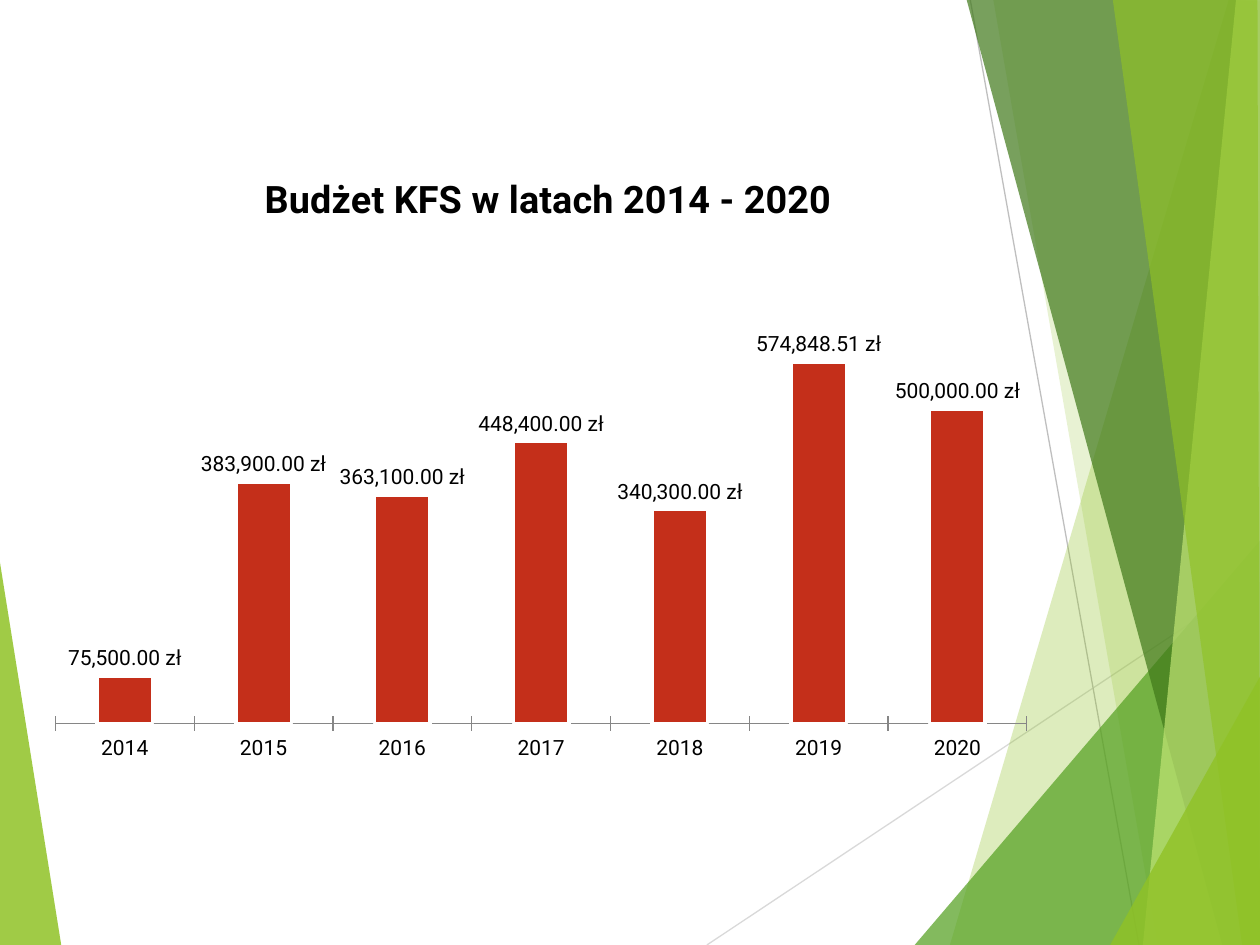
import pptx
import pptx.chart.data
import pptx.dml.color
import pptx.enum.chart
import pptx.enum.shapes
import pptx.oxml
import pptx.oxml.ns
import pptx.util
from pptx.util import Cm

FONT = "Roboto"
COLORS = {
    "lime": "90C226", "green": "54A021", "forest": "3F7819", "pale": "C0E474",
    "bar": "C42F1A", "white": "FFFFFF", "text": "000000", "axis": "868686",
    "light_line": "D9D9D9", "grey_line": "BFBFBF",
}
CURRENCY = '#,##0.00\\ "zł"'
BUDGET = {
    "2014": 75500, "2015": 383900, "2016": 363100, "2017": 448400,
    "2018": 340300, "2019": 574848.51, "2020": 500000,
}

# Outlines in cm: the slide edges, with a slight overhang
TOP, BOTTOM, RIGHT = -0.03, 19.05, 25.43
LEFT_WEDGE = ("lime", 85, [(-0.03, 11.15), (1.24, 19.08), (-0.03, BOTTOM)])
LINES = [
    ("light_line", (14.25, BOTTOM), (RIGHT, 11.61)),
    ("grey_line", (19.56, 0), (22.96, BOTTOM)),
]
RIGHT_FACETS = [
    ("lime", 30, [(24.77, 0), (19.15, BOTTOM), (25.45, 19.08), (RIGHT, 0.03)]),
    ("lime", 20, [(20.02, TOP), (23.34, BOTTOM), (RIGHT, BOTTOM), (RIGHT, TOP)]),
    ("green", 72, [(18.44, BOTTOM), (25.4, 10.9), (RIGHT, BOTTOM)]),
    ("forest", 70, [(19.48, TOP), (24.64, BOTTOM), (RIGHT, BOTTOM), (RIGHT, TOP)]),
    ("pale", 70, [(24.92, TOP), (23.04, BOTTOM), (RIGHT, BOTTOM), (25.4, TOP)]),
    ("lime", 65, [(22.43, TOP), (25.04, BOTTOM), (25.4, BOTTOM), (25.35, TOP)]),
    ("lime", 80, [(22.38, BOTTOM), (RIGHT, 13.59), (RIGHT, BOTTOM)]),
]


def rgb(name):
    return pptx.dml.color.RGBColor.from_string(COLORS[name])


def add_facet(page, color, opacity, points):
    corners = [(Cm(x), Cm(y)) for x, y in points]
    builder = page.shapes.build_freeform(*corners[0])
    builder.add_line_segments(corners[1:], close=True)
    shape = builder.convert_to_shape()
    shape.shadow.inherit = False
    shape.line.fill.background()
    shape.fill.solid()
    shape.fill.fore_color.rgb = rgb(color)
    tint = shape.fill._xPr.find(".//" + pptx.oxml.ns.qn("a:srgbClr"))
    alpha = pptx.oxml.parse_xml(
        f'<a:alpha {pptx.oxml.ns.nsdecls("a")} val="{opacity * 1000}"/>')
    tint.append(alpha)


def add_line(page, color, start, end):
    line = page.shapes.add_connector(
        pptx.enum.shapes.MSO_CONNECTOR.STRAIGHT,
        *[Cm(value) for value in start + end])
    line.line.color.rgb = rgb(color)
    line.line.width = pptx.util.Pt(0.75)
    line._element.spPr.append(
        pptx.oxml.parse_xml(f'<a:effectLst {pptx.oxml.ns.nsdecls("a")}/>'))


def style_font(font, size, bold=False):
    font.name = FONT
    font.size = pptx.util.Pt(size)
    font.bold = bold
    font.color.rgb = rgb("text")


def set_layout(parent, after, x, y, width=None, height=None):
    """Place a chart part by fractions of the chart's size."""
    target = '<c:layoutTarget val="inner"/>' if width else ""
    sizes = f'<c:w val="{width}"/><c:h val="{height}"/>' if width else ""
    layout = pptx.oxml.parse_xml(
        f'<c:layout {pptx.oxml.ns.nsdecls("c")}><c:manualLayout>{target}'
        f'<c:xMode val="edge"/><c:yMode val="edge"/>'
        f'<c:x val="{x}"/><c:y val="{y}"/>{sizes}'
        f'</c:manualLayout></c:layout>')
    for old in parent.findall(pptx.oxml.ns.qn("c:layout")):
        parent.remove(old)
    if after is None:
        parent.insert(0, layout)
    else:
        after.addnext(layout)


def add_title(chart, text):
    chart.has_title = True
    title = chart.chart_title
    span = title.text_frame.paragraphs[0].add_run()
    span.text = text
    style_font(span.font, 21.6, bold=True)
    title.include_in_layout = False
    element = title._element
    set_layout(element, element.find(pptx.oxml.ns.qn("c:tx")), 0.22, 0.05)


def add_budget_chart(page):
    data = pptx.chart.data.CategoryChartData(number_format=CURRENCY)
    data.categories = list(BUDGET)
    data.add_series("Series 1", list(BUDGET.values()))
    chart = page.shapes.add_chart(
        pptx.enum.chart.XL_CHART_TYPE.COLUMN_CLUSTERED,
        Cm(0.71), Cm(2.72), Cm(20.4), Cm(12.9), data).chart
    style_font(chart.font, 18)
    chart.has_legend = False
    add_title(chart, "Budżet KFS w latach 2014 - 2020")

    # Axes
    years = chart.category_axis
    years.major_tick_mark = pptx.enum.chart.XL_TICK_MARK.CROSS
    years.format.line.color.rgb = rgb("axis")
    style_font(years.tick_labels.font, 12)
    amounts = chart.value_axis
    amounts.minimum_scale, amounts.maximum_scale = 0, 600000
    amounts.has_major_gridlines = False
    amounts.tick_labels.number_format = CURRENCY
    amounts.tick_labels.number_format_is_linked = False
    amounts.visible = False

    # Columns and their labels
    plot = chart.plots[0]
    plot.gap_width = 150
    plot.vary_by_categories = False
    series = plot.series[0]
    series.format.fill.solid()
    series.format.fill.fore_color.rgb = rgb("bar")
    series.format.line.color.rgb = rgb("white")
    series.format.line.width = pptx.util.Pt(2)
    labels = series.data_labels
    labels.show_value = True
    labels.number_format = CURRENCY
    labels.number_format_is_linked = False
    labels.position = pptx.enum.chart.XL_LABEL_POSITION.OUTSIDE_END
    style_font(labels.font, 12)
    area = chart._chartSpace.find(".//" + pptx.oxml.ns.qn("c:plotArea"))
    set_layout(area, None, 0.02, 0.33, 0.96, 0.59)


def main():
    deck = pptx.Presentation()
    deck.slide_width, deck.slide_height = Cm(25.4), Cm(19.05)
    page = deck.slides.add_slide(deck.slide_layouts[6])

    # Background decoration
    add_facet(page, *LEFT_WEDGE)
    for line in LINES:
        add_line(page, *line)
    for facet in RIGHT_FACETS:
        add_facet(page, *facet)

    # Content
    add_budget_chart(page)
    deck.save("out.pptx")


if __name__ == "__main__":
    main()
